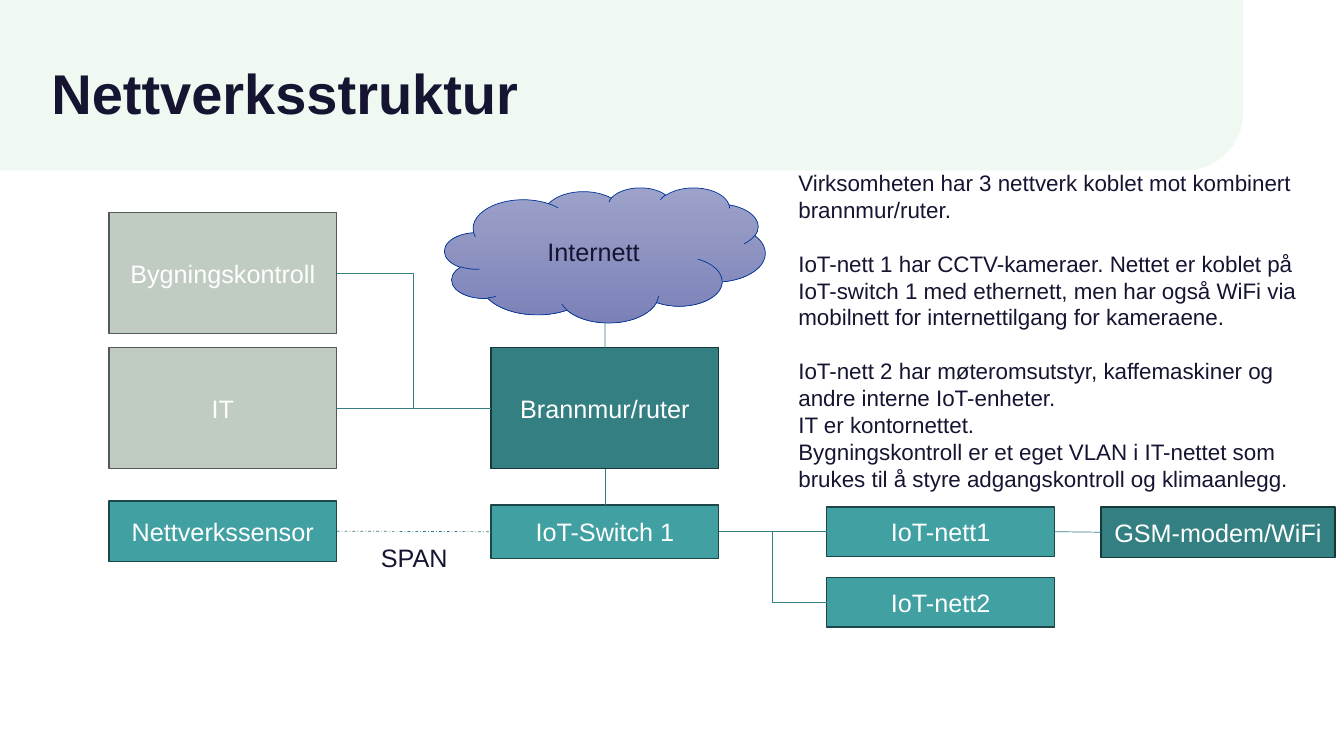
"""Build the network structure slide."""
from dataclasses import dataclass

from lxml import etree
from pptx import Presentation
from pptx import util as u
from pptx.dml.color import RGBColor
from pptx.enum import dml, shapes, text
from pptx.oxml.ns import qn


@dataclass(frozen=True)
class Theme:
    font: str = "Arial"
    ink: str = "151532"
    white: str = "FFFFFF"
    band: str = "F0F8F2"
    link: str = "347F82"
    dark: tuple = ("347F82", "173839")
    teal: tuple = ("41A0A2", "1C4647")
    grey: tuple = ("C0CBC2", "545955")
    cloud: tuple = ("9DA2CA", "7C82B8")
    cloud_line: str = "003499"
    title_size: int = 40
    label_size: int = 18
    body_size: int = 16


class NetworkSlide:
    def __init__(self, slide, theme):
        self.slide = slide
        self.theme = theme

    def add_words(self, paragraph, words, size, color, bold=False):
        run = paragraph.add_run()
        run.text = words
        run.font.name = self.theme.font
        run.font.size = u.Pt(size)
        run.font.bold = bold
        run.font.color.rgb = RGBColor.from_string(color)

    def shape(self, kind, left, top, width, height):
        added = self.slide.shapes.add_shape(
            kind, u.Inches(left), u.Inches(top), u.Inches(width), u.Inches(height))
        added.shadow.inherit = False
        return added

    def label(self, shape, words, color):
        frame = shape.text_frame
        frame.word_wrap = True
        frame.vertical_anchor = text.MSO_ANCHOR.MIDDLE
        frame.paragraphs[0].alignment = text.PP_ALIGN.CENTER
        self.add_words(frame.paragraphs[0], words, self.theme.label_size, color)

    def band(self, width, height):
        band = self.shape(shapes.MSO_SHAPE.ROUND_1_RECTANGLE, 0, 0, width, height)
        band.adjustments[0] = 0.34
        band.fill.solid()
        band.fill.fore_color.rgb = RGBColor.from_string(self.theme.band)
        band.line.fill.background()
        band._element.spPr.find(qn("a:xfrm")).set("flipV", "1")
        self.slide.shapes._spTree.insert(2, band._element)

    def title(self, words, left, top, width, height):
        title = self.slide.shapes.title
        title.left, title.top = u.Inches(left), u.Inches(top)
        title.width, title.height = u.Inches(width), u.Inches(height)
        title.text_frame.vertical_anchor = text.MSO_ANCHOR.MIDDLE
        heading = title.text_frame.paragraphs[0]
        heading.alignment = text.PP_ALIGN.LEFT
        heading.line_spacing = 0.9
        self.add_words(heading, words, self.theme.title_size, self.theme.ink, True)

    def node(self, words, colors, left, top, height, width=2.26):
        node = self.shape(shapes.MSO_SHAPE.RECTANGLE, left, top, width, height)
        fill, line = colors
        node.fill.solid()
        node.fill.fore_color.rgb = RGBColor.from_string(fill)
        node.line.color.rgb = RGBColor.from_string(line)
        node.line.width = u.Pt(1)
        self.label(node, words, self.theme.white)
        return node

    def cloud(self, words, left, top, width, height):
        cloud = self.shape(shapes.MSO_SHAPE.CLOUD, left, top, width, height)
        cloud.fill.gradient()
        cloud.fill.gradient_angle = 270
        for stop, color in zip(cloud.fill.gradient_stops, self.theme.cloud):
            stop.color.rgb = RGBColor.from_string(color)
        cloud.line.color.rgb = RGBColor.from_string(self.theme.cloud_line)
        cloud.line.width = u.Pt(0.5)
        self.label(cloud, words, self.theme.ink)

    def link(self, start, start_side, end=None, end_side=None, point=(0, 0),
             bent=False, dashed=False):
        kind = shapes.MSO_CONNECTOR.ELBOW if bent else shapes.MSO_CONNECTOR.STRAIGHT
        x, y = (u.Inches(value) for value in point)
        link = self.slide.shapes.add_connector(kind, x, y, x, y)
        link.begin_connect(start, start_side)
        if end is not None:
            link.end_connect(end, end_side)
        link.line.color.rgb = RGBColor.from_string(self.theme.link)
        link.line.width = u.Pt(0.5)
        if dashed:
            link.line.dash_style = dml.MSO_LINE.DASH_DOT
        etree.SubElement(link._element.spPr, qn("a:effectLst"))

    def text(self, paragraphs, size, left, top, width, height, wrap=True):
        box = self.slide.shapes.add_textbox(
            u.Inches(left), u.Inches(top), u.Inches(width), u.Inches(height))
        frame = box.text_frame
        frame.word_wrap = wrap
        for index, (words, gap) in enumerate(paragraphs):
            paragraph = frame.add_paragraph() if index else frame.paragraphs[0]
            if gap:
                paragraph.space_before = u.Pt(gap)
            self.add_words(paragraph, words, size, self.theme.ink)


def main():
    theme = Theme()
    deck = Presentation()
    deck.slide_width, deck.slide_height = u.Inches(13.33), u.Inches(7.5)
    page = NetworkSlide(deck.slides.add_slide(deck.slide_layouts[5]), theme)
    top, left, bottom, right = range(4)
    west, centre, east = 1.08, 4.87, 8.2

    page.band(12.33, 1.69)
    page.title("Nettverksstruktur", 0.41, 0.36, 11.85, 1.2)

    router = page.node("Brannmur/ruter", theme.dark, centre, 3.45, 1.2)
    office = page.node("IT", theme.grey, west, 3.45, 1.2)
    building = page.node("Bygningskontroll", theme.grey, west, 2.11, 1.2)
    page.cloud("Internett", 4.41, 1.86, 3.18, 1.34)
    switch = page.node("IoT-Switch 1", theme.teal, centre, 5.01, 0.53)
    cameras = page.node("IoT-nett1", theme.teal, east, 5.03, 0.49)
    devices = page.node("IoT-nett2", theme.teal, east, 5.73, 0.49)
    sensor = page.node("Nettverkssensor", theme.teal, west, 4.97, 0.6)
    modem = page.node("GSM-modem/WiFi", theme.dark, 10.92, 5.03, 0.5, 2.32)

    page.link(switch, top, router, bottom)
    page.link(router, top, point=(6, 3.2))
    page.link(office, right, router, left)
    page.link(building, right, router, left, bent=True)
    page.link(cameras, left, switch, right)
    page.link(devices, left, switch, right, bent=True)
    page.link(sensor, right, switch, left, dashed=True)
    page.link(cameras, right, modem, left)

    page.text([("SPAN", 0)], theme.label_size, 3.68, 5.33, 0.87, 0.4, wrap=False)
    blank = 19.2
    page.text([
        ("Virksomheten har 3 nettverk koblet mot kombinert brannmur/ruter.", 0),
        ("IoT-nett 1 har CCTV-kameraer. Nettet er koblet på IoT-switch 1 med "
         "ethernett, men har også WiFi via mobilnett for internettilgang for "
         "kameraene.", blank),
        ("IoT-nett 2 har møteromsutstyr, kaffemaskiner og andre interne "
         "IoT-enheter.", blank),
        ("IT er kontornettet.", 0),
        ("Bygningskontroll er et eget VLAN i IT-nettet som brukes til å styre "
         "adgangskontroll og klimaanlegg.", 0),
    ], theme.body_size, 7.82, 1.63, 5.23, 3.33)
    deck.save("out.pptx")


if __name__ == "__main__":
    main()
